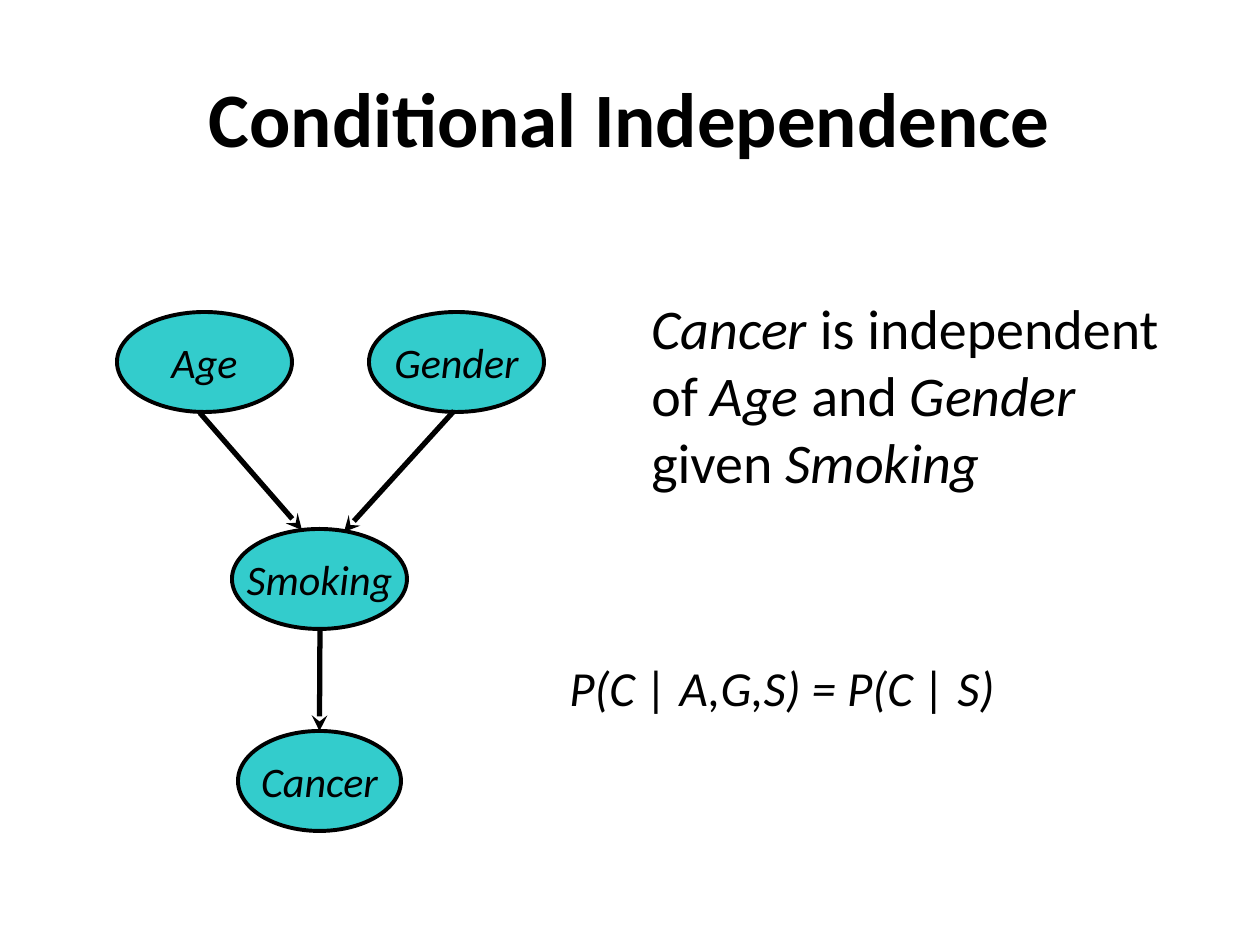
import pptx
import pptx.dml.color
import pptx.enum.dml
import pptx.enum.shapes
import pptx.enum.text
import pptx.oxml
import pptx.oxml.ns
import pptx.util

PX_PER_INCH = 126
FONT = "Calibri"
BLACK = "000000"
TEAL = "33CCCC"
ALIGN = pptx.enum.text.PP_ALIGN
ANCHOR = pptx.enum.text.MSO_ANCHOR


def px(length):
    """Turn whole pixels into EMU."""
    return pptx.util.Emu(round(length * 914400 / PX_PER_INCH))


def color(hex_string):
    """Turn a hex string into an RGB colour."""
    return pptx.dml.color.RGBColor.from_string(hex_string)


def write(shape, runs, size=24, bold=False, align=ALIGN.LEFT, anchor=ANCHOR.TOP, wrap=True):
    """Fill a shape with one paragraph of (text, italic) runs."""
    frame = shape.text_frame
    frame.word_wrap = wrap
    frame.vertical_anchor = anchor
    paragraph = frame.paragraphs[0]
    paragraph.alignment = align
    for text, italic in runs:
        run = paragraph.add_run()
        run.text = text
        run.font.name = FONT
        run.font.size = pptx.util.Pt(size)
        run.font.bold = bold
        run.font.italic = italic
        run.font.color.rgb = color(BLACK)


def add_text(slide, box, runs, **style):
    """Place a text box in the given box."""
    write(slide.shapes.add_textbox(*map(px, box)), runs, **style)


def add_node(slide, box, label):
    """Place one labelled variable of the network."""
    node = slide.shapes.add_shape(pptx.enum.shapes.MSO_SHAPE.OVAL, *map(px, box))
    node.shadow.inherit = False
    node.fill.solid()
    node.fill.fore_color.rgb = color(TEAL)
    node.line.color.rgb = color(BLACK)
    node.line.width = pptx.util.Pt(2.25)
    write(node, [(label, True)], align=ALIGN.CENTER, anchor=ANCHOR.MIDDLE, wrap=False)
    return node


def add_arrow(slide, start, end):
    """Draw a stealth-headed arrow between two points."""
    arrow = slide.shapes.add_connector(
        pptx.enum.shapes.MSO_CONNECTOR.STRAIGHT, *map(px, (*start, *end)))
    arrow.line.color.rgb = color(BLACK)
    arrow.line.width = pptx.util.Pt(3)
    namespace = pptx.oxml.ns.nsdecls("a")
    head = pptx.oxml.parse_xml(f'<a:tailEnd {namespace} type="stealth"/>')
    arrow.line._get_or_add_ln().append(head)
    properties = arrow._element.spPr
    properties.append(pptx.oxml.parse_xml(f"<a:effectLst {namespace}/>"))
    return arrow


def add_network(slide, left, top):
    """Draw the causal network from its top left corner."""
    nodes = {
        label: add_node(slide, (left + x, top + y, width, 100), label)
        for label, x, y, width in (
            ("Smoking", 115, 217, 175),
            ("Gender", 252, 0, 175),
            ("Age", 0, 0, 175),
            ("Cancer", 121, 419, 163),
        )
    }
    for x1, y1, x2, y2 in ((337, 99, 227, 220), (83, 101, 185, 218)):
        add_arrow(slide, (left + x1, top + y1), (left + x2, top + y2))
    effect = add_arrow(slide, (left + 203, top + 319), (left + 203, top + 419))
    effect.end_connect(nodes["Cancer"], 0)


def add_statement(slide, left, top):
    """Place the independence claim and its formula."""
    claim = [
        ("Cancer", True), (" is independent of ", False), ("Age", True),
        (" and ", False), ("Gender", True), (" given ", False), ("Smoking", True),
    ]
    add_text(slide, (left + 82, top, 553, 217), claim, size=32)
    add_text(slide, (left, top + 364, 457, 72),
             [("P(C | A,G,S) = P(C | S)", True)], size=28, wrap=False)


def main():
    """Build and save the slide."""
    deck = pptx.Presentation()
    deck.slide_width, deck.slide_height = px(1260), px(945)
    slide = deck.slides.add_slide(deck.slide_layouts[6])
    add_text(slide, (63, 38, 1134, 157), [("Conditional Independence", False)],
             size=44, bold=True, align=ALIGN.CENTER, anchor=ANCHOR.MIDDLE)
    add_network(slide, 117, 312)
    add_statement(slide, 557, 287)
    deck.save("out.pptx")


if __name__ == "__main__":
    main()
